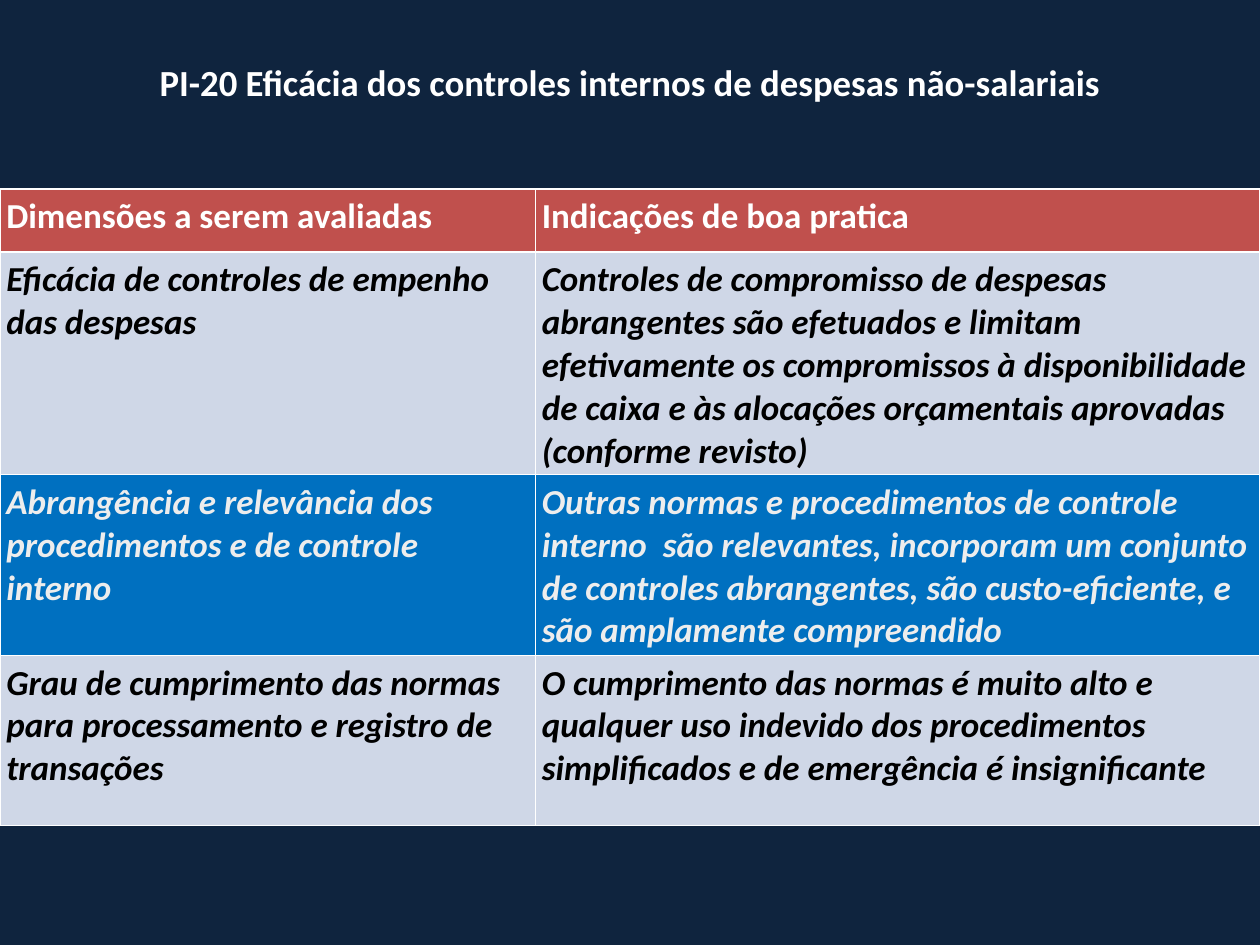
import pptx
import pptx.dml.color
import pptx.enum.text
import pptx.oxml
import pptx.oxml.ns
import pptx.util

Pt = pptx.util.Pt
HUES = {"navy": "0F243E", "white": "FFFFFF", "red": "C0504D", "pale": "CFD7E7",
        "blue": "0070C0", "black": "000000", "light": "EDEDED"}
ROWS = [
    ("red", "white", 36, "Dimensões a serem avaliadas", "Indicações de boa pratica"),
    ("pale", "black", 97.2, "Eficácia de controles de empenho das despesas",
     "Controles de compromisso de despesas abrangentes são efetuados e limitam "
     "efetivamente os compromissos à disponibilidade de caixa e às alocações "
     "orçamentais aprovadas (conforme revisto)"),
    ("blue", "light", 97.2,
     "Abrangência e relevância dos procedimentos e de controle interno",
     "Outras normas e procedimentos de controle interno  são relevantes, incorporam "
     "um conjunto de controles abrangentes, são custo-eficiente, e são amplamente "
     "compreendido"),
    ("pale", "black", 97.2,
     "Grau de cumprimento das normas para processamento e registro de transações",
     "O cumprimento das normas é muito alto e qualquer uso indevido dos "
     "procedimentos simplificados e de emergência é insignificante"),
]


class Deck:
    """Hold the style and the current slide, and draw each kind of element."""

    def __init__(self, slide):
        self.slide = slide
        self.face = "Calibri"
        self.inset = Pt(3.6)

    def paint(self, fill, hue):
        fill.solid()
        fill.fore_color.rgb = pptx.dml.color.RGBColor.from_string(HUES[hue])

    def pad(self, item):
        item.margin_left = item.margin_right = self.inset
        item.margin_top = item.margin_bottom = self.inset

    def label(self, frame, text, size, hue, slant=False):
        frame.word_wrap = True
        line = frame.paragraphs[0]
        line.text = text
        font = line.font
        font.name, font.size = self.face, Pt(size)
        font.bold, font.italic = True, slant
        font.color.rgb = pptx.dml.color.RGBColor.from_string(HUES[hue])
        return line

    def title(self, text, left, top, width, height):
        box = self.slide.shapes.add_textbox(Pt(left), Pt(top), Pt(width), Pt(height))
        frame = box.text_frame
        self.pad(frame)
        frame.vertical_anchor = pptx.enum.text.MSO_ANCHOR.MIDDLE
        line = self.label(frame, text, 21, "white")
        line.alignment = pptx.enum.text.PP_ALIGN.CENTER

    def border(self, cell):
        props = cell._tc.get_or_add_tcPr()
        for spot, side in enumerate(("lnL", "lnR", "lnT", "lnB")):
            edge = pptx.oxml.parse_xml(
                f'<a:{side} {pptx.oxml.ns.nsdecls("a")} w="{Pt(1)}"><a:solidFill>'
                f'<a:srgbClr val="{HUES["white"]}"/></a:solidFill></a:{side}>')
            props.insert(spot, edge)

    def table(self, rows, left, top, widths):
        high = sum(row[2] for row in rows)
        grid = self.slide.shapes.add_table(
            len(rows), len(widths), Pt(left), Pt(top), Pt(sum(widths)), Pt(high)).table
        for col, width in zip(grid.columns, widths):
            col.width = Pt(width)
        for r, (fill, ink, height, *texts) in enumerate(rows):
            grid.rows[r].height = Pt(height)
            for c, text in enumerate(texts):
                cell = grid.cell(r, c)
                self.pad(cell)
                self.paint(cell.fill, fill)
                self.border(cell)
                self.label(cell.text_frame, text, 20, ink, r > 0)


def main():
    show = pptx.Presentation()
    show.slide_width, show.slide_height = Pt(720), Pt(540)
    deck = Deck(show.slides.add_slide(show.slide_layouts[6]))
    deck.paint(deck.slide.background.fill, "navy")
    deck.title("PI-20 Eficácia dos controles internos de despesas não-salariais",
               36, 21.6, 648, 50.4)
    deck.table(ROWS, 0, 108, (306, 414))
    show.save("out.pptx")


if __name__ == "__main__":
    main()
